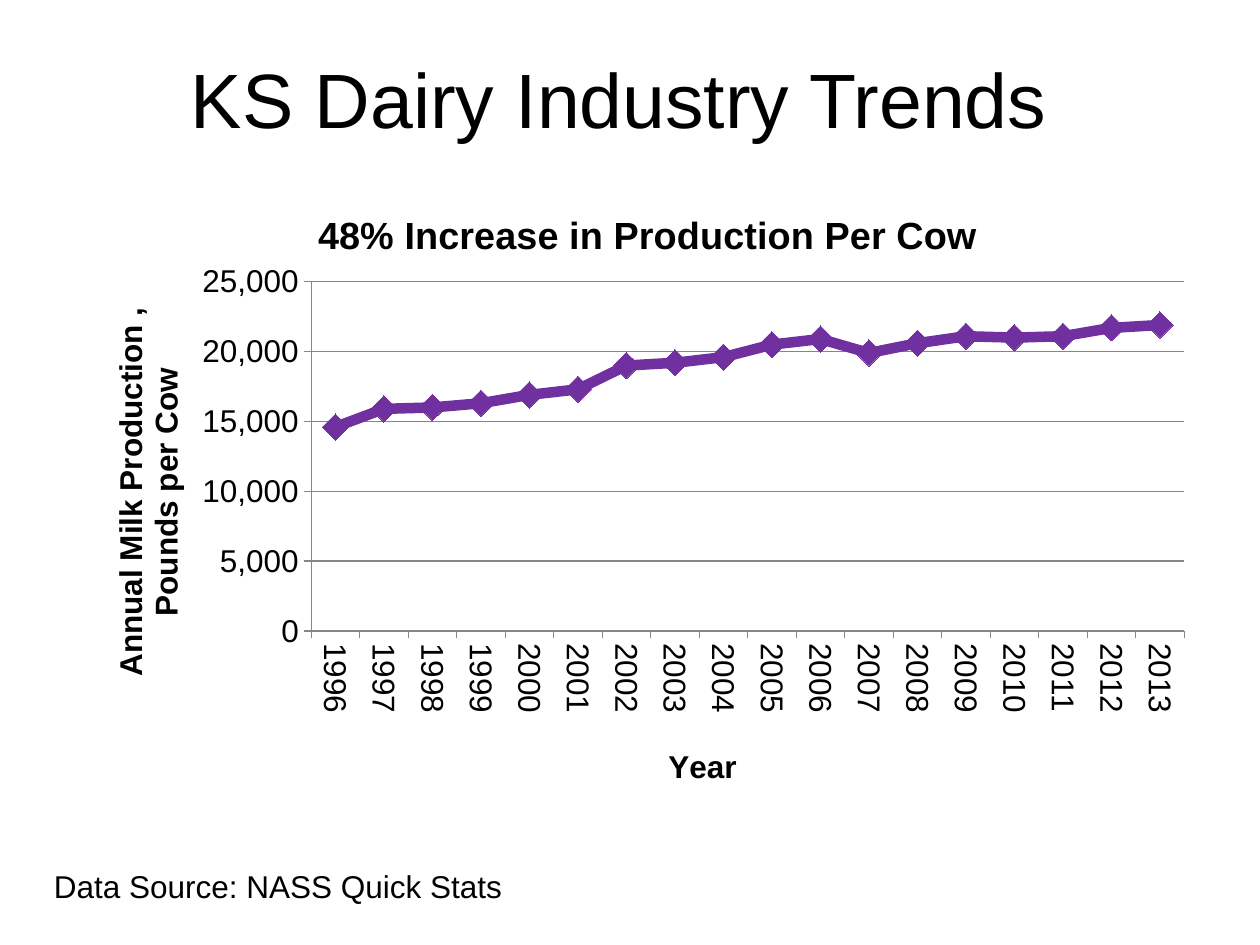
from lxml import etree
from pptx import Presentation
from pptx.chart.data import CategoryChartData
from pptx.dml.color import RGBColor
from pptx.enum import chart as ch, text
from pptx.oxml.ns import qn
from pptx.util import Inches, Pt

TITLE = "KS Dairy Industry Trends "
SOURCE = "Data Source: NASS Quick Stats"
CHART_TITLE = "48% Increase in Production Per Cow"
YEAR_TITLE = "Year"
POUNDS_TITLE = "Annual Milk Production ,\nPounds per Cow"
FIRST_YEAR = 1996
POUNDS_PER_COW = [14600, 15900, 16000, 16300, 16900, 17300, 19000, 19200, 19600,
                  20500, 20900, 19900, 20600, 21100, 21000, 21100, 21700, 21900]

THEME = {
    "font": "Arial",
    "ink": RGBColor(0, 0, 0),
    "line": RGBColor(0x70, 0x30, 0xA0),
    "grid": RGBColor(0x86, 0x86, 0x86),
    "title": Pt(44),
    "chart_title": Pt(21.6),
    "body": Pt(18),
}
QUARTER_TURN = 5400000


def style(font, size, bold=False):
    font.name, font.size, font.bold = THEME["font"], size, bold
    font.color.rgb = THEME["ink"]


def add_text(slide, words, box, size, align, anchor):
    frame = slide.shapes.add_textbox(*map(Inches, box)).text_frame
    frame.word_wrap = True
    frame.vertical_anchor = anchor
    frame.text = words
    frame.paragraphs[0].alignment = align
    style(frame.paragraphs[0].runs[0].font, size)


def manual_layout(**settings):
    """Return a c:layout whose positions are fractions of the chart area."""
    layout = etree.Element(qn("c:layout"))
    manual = etree.SubElement(layout, qn("c:manualLayout"))
    for tag, value in settings.items():
        etree.SubElement(manual, qn(f"c:{tag}")).set("val", str(value))
    return layout


def set_title(title, words, size, x, y):
    frame = title.text_frame
    frame.text = words
    for paragraph in frame.paragraphs:
        style(paragraph.runs[0].font, size, bold=True)
    element = frame._txBody.getparent().getparent()
    for old in element.findall(qn("c:layout")):
        element.remove(old)
    element.find(qn("c:tx")).addnext(
        manual_layout(xMode="edge", yMode="edge", x=x, y=y))


def rotate(body, angle):
    body.set("rot", str(angle))
    body.set("vert", "horz")


def add_production_chart(slide):
    data = CategoryChartData(number_format="#,##0")
    data.categories = [str(FIRST_YEAR + i) for i in range(len(POUNDS_PER_COW))]
    data.add_series("Series 1", POUNDS_PER_COW)
    chart = slide.shapes.add_chart(
        ch.XL_CHART_TYPE.LINE_MARKERS,
        *map(Inches, (0.58, 1.42, 9, 4.95)), data).chart
    style(chart.font, THEME["body"])
    chart.has_legend = False
    set_title(chart.chart_title, CHART_TITLE, THEME["chart_title"], 0.21, 0.04)

    years, pounds = chart.category_axis, chart.value_axis
    set_title(years.axis_title, YEAR_TITLE, THEME["body"], 0.52, 0.9)
    set_title(pounds.axis_title, POUNDS_TITLE, THEME["body"], 0.03, 0.2)
    rotate(pounds.axis_title.text_frame._txBody.bodyPr, -QUARTER_TURN)
    style(years.tick_labels.font, THEME["body"])
    rotate(years._element.find(qn("c:txPr")).find(qn("a:bodyPr")), QUARTER_TURN)

    pounds.minimum_scale, pounds.maximum_scale, pounds.major_unit = 0, 25000, 5000
    pounds.tick_labels.number_format = "#,##0"
    pounds.tick_labels.number_format_is_linked = False
    pounds.has_major_gridlines = True
    for axis in (years, pounds):
        axis.major_tick_mark = ch.XL_TICK_MARK.OUTSIDE
        axis.minor_tick_mark = ch.XL_TICK_MARK.NONE
    for part in (years, pounds, pounds.major_gridlines):
        part.format.line.color.rgb = THEME["grid"]
        part.format.line.width = Pt(0.75)

    plot = chart.plots[0]
    plot.vary_by_categories = False
    production = plot.series[0]
    production.smooth = False
    production.format.line.color.rgb = THEME["line"]
    production.format.line.width = Pt(6)
    marker = production.marker
    marker.style, marker.size = ch.XL_MARKER_STYLE.DIAMOND, 15
    marker.format.fill.solid()
    marker.format.fill.fore_color.rgb = THEME["line"]
    marker.format.line.color.rgb = THEME["line"]

    area = chart._chartSpace.chart.plotArea
    for old in area.findall(qn("c:layout")):
        area.remove(old)
    area.insert(0, manual_layout(layoutTarget="inner", xMode="edge", yMode="edge",
                                 x=0.21, y=0.165, w=0.77, h=0.56))


def main():
    deck = Presentation()
    deck.slide_width, deck.slide_height = Inches(10), Inches(7.5)
    slide = deck.slides.add_slide(deck.slide_layouts[6])
    add_text(slide, TITLE, (0.5, 0.3, 9, 0.95), THEME["title"],
             text.PP_ALIGN.CENTER, text.MSO_ANCHOR.MIDDLE)
    add_production_chart(slide)
    add_text(slide, SOURCE, (0.33, 6.83, 6.83, 0.42), THEME["body"],
             text.PP_ALIGN.LEFT, text.MSO_ANCHOR.TOP)
    deck.save("out.pptx")


if __name__ == "__main__":
    main()
